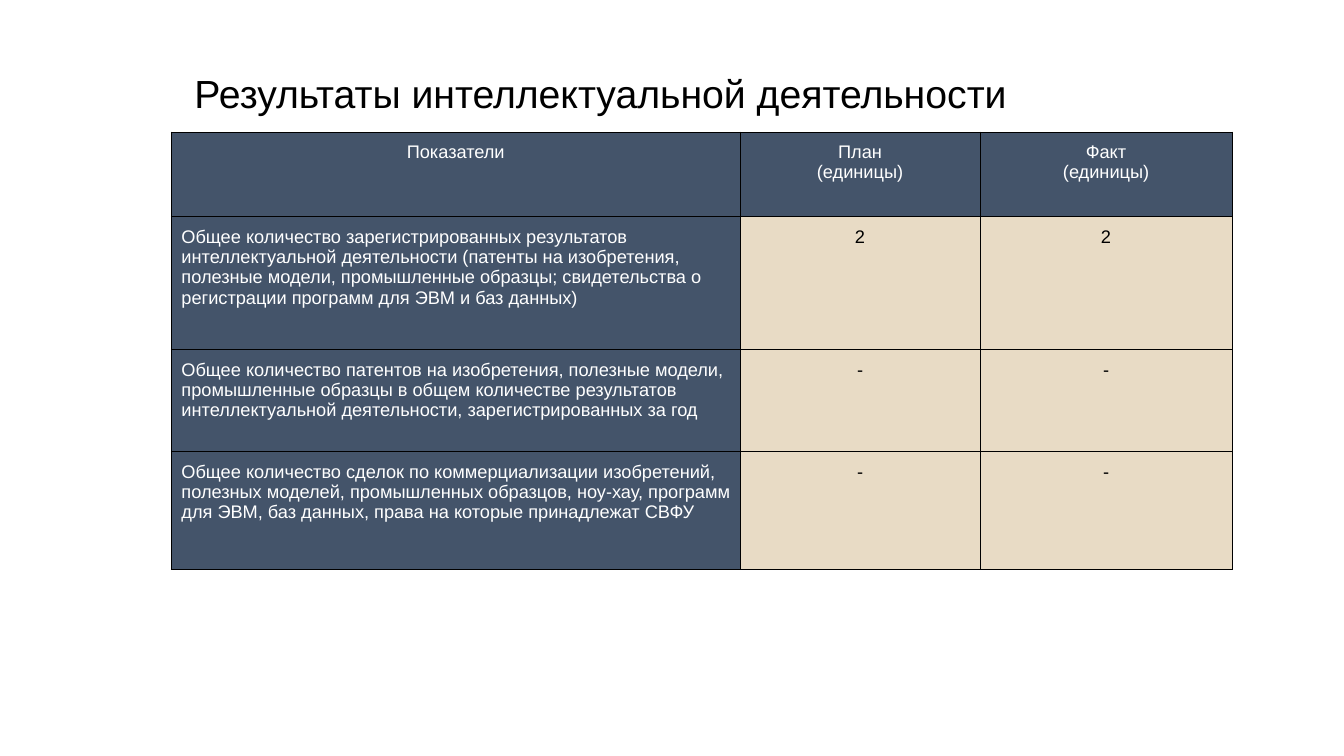
from lxml import etree
from pptx import Presentation
from pptx.dml.color import RGBColor
from pptx.enum.text import PP_ALIGN
from pptx.oxml.ns import qn
from pptx.util import Inches, Pt

LEFT, CENTER = PP_ALIGN.LEFT, PP_ALIGN.CENTER
FONT = "Arial"
BLACK, WHITE, SLATE, SAND = "000000", "FFFFFF", "44546A", "E8DBC5"

TITLE = "Результаты интеллектуальной деятельности"
ROWS = [
    ("Показатели", "План\n(единицы)", "Факт\n(единицы)"),
    ("Общее количество зарегистрированных результатов интеллектуальной "
     "деятельности (патенты на изобретения, полезные модели, промышленные "
     "образцы; свидетельства о регистрации программ для ЭВМ и баз данных)",
     "2", "2"),
    ("Общее количество патентов на изобретения, полезные модели, промышленные "
     "образцы в общем количестве результатов интеллектуальной деятельности, "
     "зарегистрированных за год", "-", "-"),
    ("Общее количество сделок по коммерциализации изобретений, полезных "
     "моделей, промышленных образцов, ноу-хау, программ для ЭВМ, баз данных, "
     "права на которые принадлежат СВФУ", "-", "-"),
]
COLUMN_WIDTHS = [5.64, 2.38, 2.5]
ROW_HEIGHTS = [0.84, 1.32, 1.01, 1.17]


def color(hex_value):
    return RGBColor.from_string(hex_value)


def write(frame, text, size, ink, align):
    frame.text = text
    for para in frame.paragraphs:
        para.alignment = align
        para.font.name = FONT
        para.font.size = Pt(size)
        para.font.color.rgb = color(ink)


def add_borders(cell):
    """Put a thin black line on all four sides, ahead of the cell's fill."""
    properties = cell._tc.get_or_add_tcPr()
    for index, side in enumerate(("a:lnL", "a:lnR", "a:lnT", "a:lnB")):
        line = etree.Element(qn(side), w=str(Pt(0.75)))
        fill = etree.SubElement(line, qn("a:solidFill"))
        etree.SubElement(fill, qn("a:srgbClr"), val=BLACK)
        properties.insert(index, line)


def add_title(page):
    box = page.shapes.add_textbox(Inches(1.83), Inches(0.64), Inches(8.92), Inches(0.57))
    box.text_frame.word_wrap = True
    write(box.text_frame, TITLE, 28, BLACK, LEFT)


def add_results_table(page):
    table = page.shapes.add_table(
        len(ROWS), len(COLUMN_WIDTHS), Inches(1.7), Inches(1.31),
        Inches(sum(COLUMN_WIDTHS)), Inches(sum(ROW_HEIGHTS))).table
    table.horz_banding = False
    for column, width in zip(table.columns, COLUMN_WIDTHS):
        column.width = Inches(width)
    for r, (row, height) in enumerate(zip(ROWS, ROW_HEIGHTS)):
        table.rows[r].height = Inches(height)
        for c, text in enumerate(row):
            cell = table.cell(r, c)
            is_heading = r == 0 or c == 0
            cell.margin_left = cell.margin_right = Inches(0.1)
            cell.margin_top = cell.margin_bottom = Inches(0.1)
            cell.fill.solid()
            cell.fill.fore_color.rgb = color(SLATE if is_heading else SAND)
            add_borders(cell)
            write(cell.text_frame, text, 13, WHITE if is_heading else BLACK,
                  LEFT if r and c == 0 else CENTER)
            for para in cell.text_frame.paragraphs:
                para.font.bold = False


def main():
    deck = Presentation()
    deck.slide_width, deck.slide_height = Inches(13.33), Inches(7.5)
    page = deck.slides.add_slide(deck.slide_layouts[6])
    add_title(page)
    add_results_table(page)
    deck.save("out.pptx")


if __name__ == "__main__":
    main()
